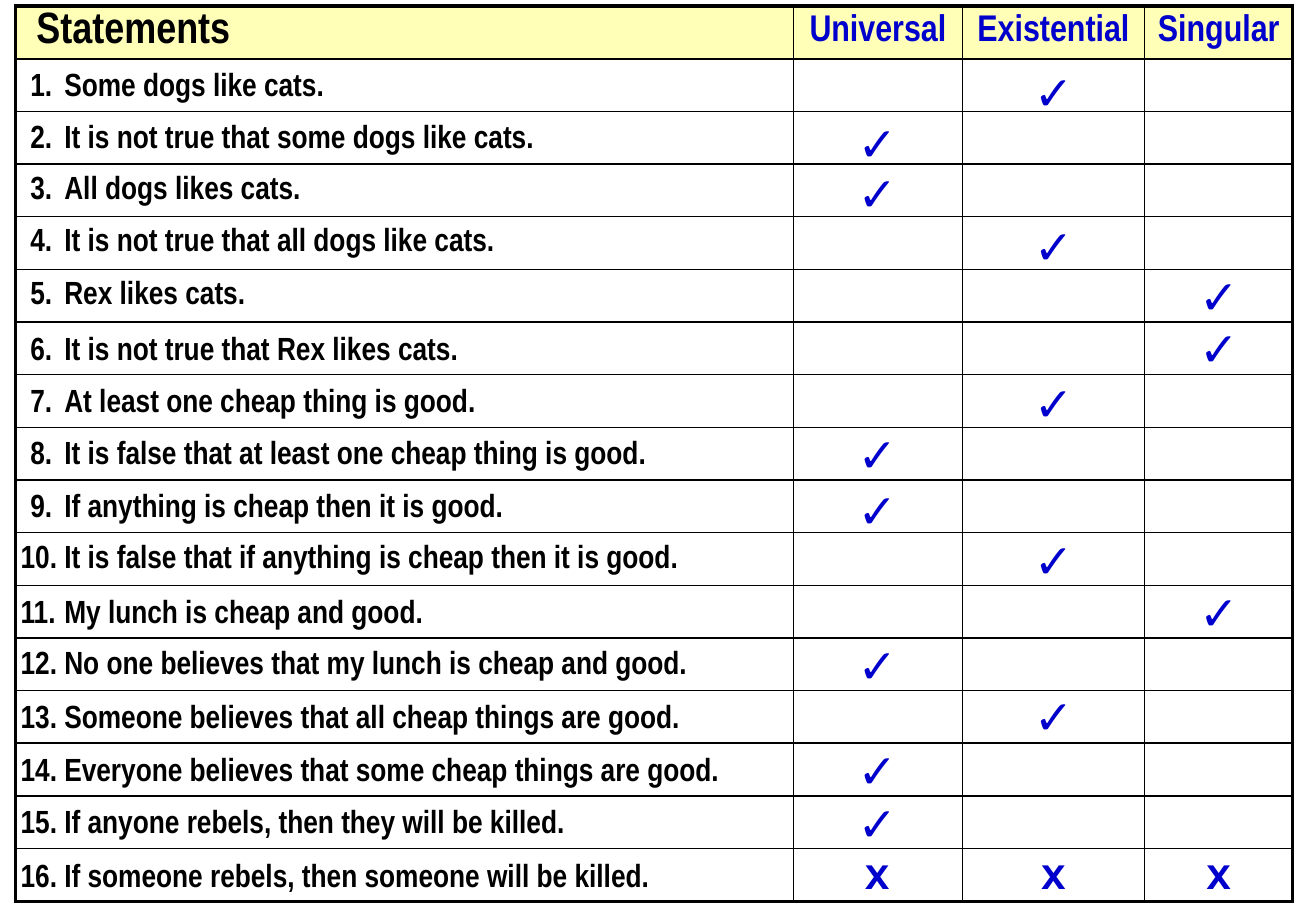
import pptx
import pptx.util
import pptx.dml.color
import pptx.enum.text
import pptx.oxml
import lxml.etree
from pptx.oxml.ns import qn

Inches = pptx.util.Inches
Pt = pptx.util.Pt
RGBColor = pptx.dml.color.RGBColor
PP_ALIGN = pptx.enum.text.PP_ALIGN
MSO_ANCHOR = pptx.enum.text.MSO_ANCHOR

BLACK = RGBColor(0x00, 0x00, 0x00)
BLUE = RGBColor(0x00, 0x00, 0xCC)
YELLOW = RGBColor(0xFF, 0xFF, 0x99)

KINDS = ["Universal", "Existential", "Singular"]
COLUMN_WIDTHS = [6.4, 1.39, 1.5, 1.22]
MARK_LEFTS = [6.88, 8.33, 9.69]
ROW_COUNT = 17
ROW_HEIGHT = 7.37 / ROW_COUNT
TEXT_START = 0.53

STATEMENTS = [
    ("Some dogs like cats.", 0.49, "Existential", 0.52),
    ("It is not true that some dogs like cats.", 0.92, "Universal", 0.94),
    ("All dogs likes cats.", 1.34, "Universal", 1.35),
    ("It is not true that all dogs like cats.", 1.77, "Existential", 1.79),
    ("Rex likes cats.", 2.2, "Singular", 2.2),
    ("It is not true that Rex likes cats.", 2.66, "Singular", 2.63),
    ("At least one cheap thing is good.", 3.09, "Existential", 3.08),
    ("It is false that at least one cheap thing is good.", 3.52, "Universal", 3.5),
    ("If anything is cheap then it is good.", 3.96, "Universal", 3.96),
    ("It is false that if anything is cheap then it is good.", 4.38, "Existential", 4.37),
    ("My lunch is cheap and good.", 4.83, "Singular", 4.8),
    ("No one believes that my lunch is cheap and good.", 5.25, "Universal", 5.24),
    ("Someone believes that all cheap things are good.", 5.69, "Existential", 5.66),
    ("Everyone believes that some cheap things are good.", 6.13, "Universal", 6.1),
    ("If anyone rebels, then they will be killed.", 6.56, "Universal", 6.54),
    ("If someone rebels, then someone will be killed.", 7.0, None, 7.05),
]


class StatementSlide:
    font_name = "Arial Narrow"

    def __init__(self, presentation):
        self.slide = presentation.slides.add_slide(presentation.slide_layouts[6])

    def style(self, paragraph, size, color, font_name=None):
        paragraph.font.name = font_name or self.font_name
        paragraph.font.size = Pt(size)
        paragraph.font.bold = True
        paragraph.font.color.rgb = color

    def text(self, words, left, top, width, height, margins):
        frame = self.slide.shapes.add_textbox(
            Inches(left), Inches(top), Inches(width), Inches(height)).text_frame
        frame.word_wrap = True
        frame.margin_left = frame.margin_right = Inches(margins[0])
        frame.margin_top = frame.margin_bottom = Inches(margins[1])
        frame.text = words
        return frame

    def statement(self, number, words, top):
        left = 0.16 if number < 10 else 0.08
        frame = self.text(f"{number}.\t{words}", left, top, 6.5, 0.42, (0.09, 0.04))
        paragraph = frame.paragraphs[0]
        self.style(paragraph, 19, BLACK)
        tabs = lxml.etree.Element(qn("a:tabLst"))
        position = Inches(TEXT_START - left - 0.09)
        lxml.etree.SubElement(tabs, qn("a:tab"), pos=str(position), algn="l")
        paragraph._p.get_or_add_pPr().insert(0, tabs)

    def mark(self, symbol, left, top, height, size, font_name=None):
        frame = self.text(symbol, left, top, 0.68, height, (0, 0))
        frame.vertical_anchor = MSO_ANCHOR.MIDDLE
        frame.auto_size = pptx.enum.text.MSO_AUTO_SIZE.SHAPE_TO_FIT_TEXT
        frame.paragraphs[0].alignment = PP_ALIGN.CENTER
        self.style(frame.paragraphs[0], size, BLUE, font_name)

    def borders(self, cell, widths):
        properties = cell._tc.get_or_add_tcPr()
        for index, (side, width) in enumerate(zip("LRTB", widths)):
            line = lxml.etree.Element(qn(f"a:ln{side}"), w=str(Pt(width)))
            fill = lxml.etree.SubElement(line, qn("a:solidFill"))
            lxml.etree.SubElement(fill, qn("a:srgbClr"), val=str(BLACK))
            properties.insert(index, line)

    def heading(self, cell, words, is_first):
        cell.fill.solid()
        cell.fill.fore_color.rgb = YELLOW
        tint = cell._tc.tcPr.find(".//" + qn("a:srgbClr"))
        lxml.etree.SubElement(tint, qn("a:alpha"), val="70000")
        cell.text = words
        paragraph = cell.text_frame.paragraphs[0]
        if is_first:
            cell.margin_left = Inches(0.17)
            self.style(paragraph, 26, BLACK)
        else:
            paragraph.alignment = PP_ALIGN.CENTER
            self.style(paragraph, 22, BLUE)

    def grid(self, headings):
        table = self.slide.shapes.add_table(
            ROW_COUNT, len(headings), Inches(0.13), Inches(0.05),
            Inches(sum(COLUMN_WIDTHS)), Inches(ROW_HEIGHT * ROW_COUNT)).table
        table.first_row = table.horz_banding = False
        for column, width in zip(table.columns, COLUMN_WIDTHS):
            column.width = Inches(width)
        last_row, last_column = ROW_COUNT - 1, len(headings) - 1
        for r, row in enumerate(table.rows):
            row.height = Inches(ROW_HEIGHT)
            top = {0: 2.25, 1: 1.5}.get(r, 1)
            bottom = {0: 1.5, last_row: 2.25}.get(r, 1)
            for c, cell in enumerate(row.cells):
                cell.margin_left = cell.margin_right = 0
                cell.margin_top = cell.margin_bottom = 0
                cell.vertical_anchor = MSO_ANCHOR.MIDDLE
                if r == 0:
                    self.heading(cell, headings[c], c == 0)
                else:
                    cell.fill.background()
                left = 2.25 if c == 0 else 1
                right = 2.25 if c == last_column else 1
                self.borders(cell, (left, right, top, bottom))


def main():
    presentation = pptx.Presentation()
    presentation.slide_width = Inches(10.83)
    presentation.slide_height = Inches(7.5)
    page = StatementSlide(presentation)
    page.grid(["Statements"] + KINDS)
    for number, (words, top, kind, mark_top) in enumerate(STATEMENTS, 1):
        page.statement(number, words, top)
        if kind:
            page.mark("✓", MARK_LEFTS[KINDS.index(kind)], mark_top, 0.47, 28)
        else:
            for left in MARK_LEFTS:
                page.mark("X", left, mark_top, 0.33, 20, "Montserrat")
    presentation.save("out.pptx")


if __name__ == "__main__":
    main()
